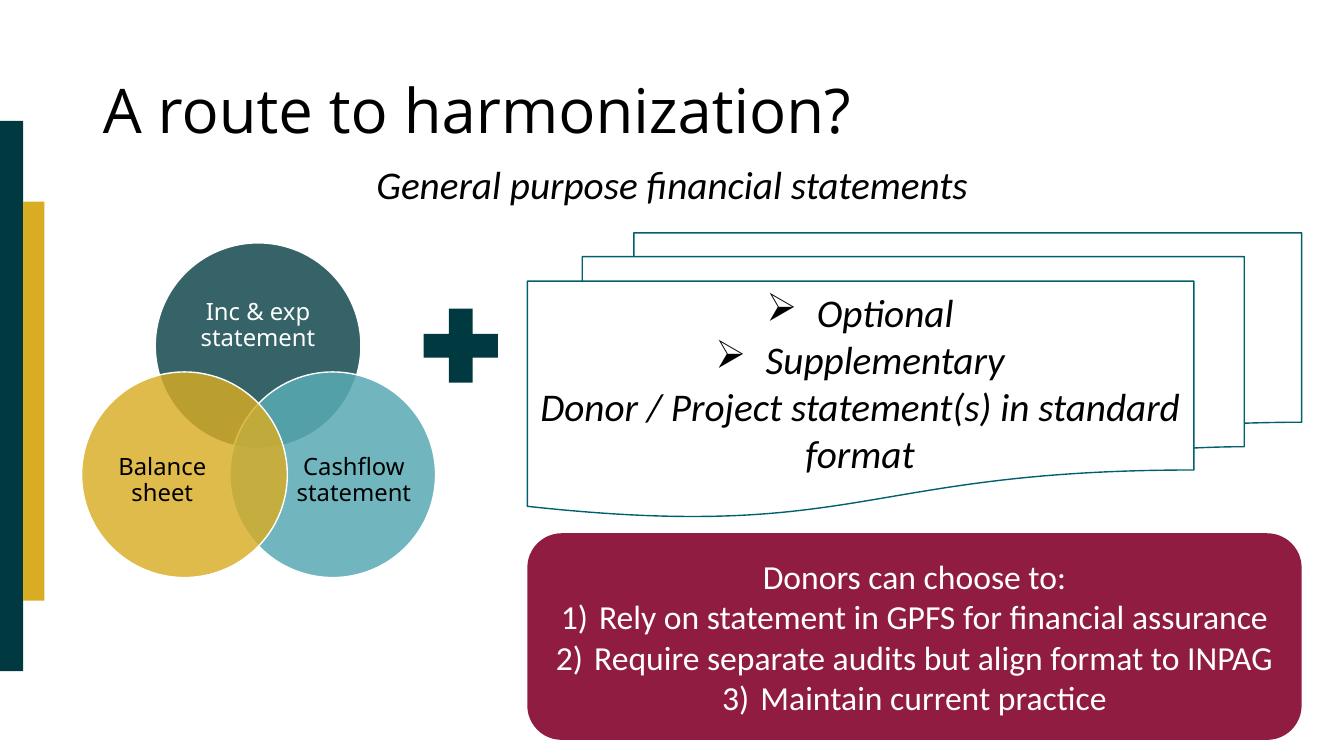
"""Build the slide on a route to harmonized financial statements."""
import lxml.etree
import pptx
import pptx.dml.color
import pptx.enum.shapes
import pptx.enum.text
import pptx.oxml.ns
import pptx.util

RGBColor = pptx.dml.color.RGBColor
SHAPES = pptx.enum.shapes.MSO_SHAPE
ANCHOR = pptx.enum.text.MSO_ANCHOR
ALIGN = pptx.enum.text.PP_ALIGN

EMU_PER_PX = 9144
TEAL_DARK = RGBColor(0x00, 0x3A, 0x40)
TEAL_LINE = RGBColor(0x00, 0x61, 0x6C)
TEAL_LIGHT = RGBColor(0x5A, 0xAB, 0xB4)
GOLD = RGBColor(0xD8, 0xAD, 0x24)
BURGUNDY = RGBColor(0x90, 0x1D, 0x41)
WHITE = RGBColor(0xFF, 0xFF, 0xFF)
BLACK = RGBColor(0x00, 0x00, 0x00)

CIRCLE_SIZE = 204
ARROW_BULLET = ("buChar", {"char": "➢"}, 50)
NUMBER_BULLET = ("buAutoNum", {"type": "arabicParenR"}, 38)


def px(length):
    """Turn px into EMU."""
    return pptx.util.Emu(length * EMU_PER_PX)


def add_child(parent, tag, attributes):
    """Append a drawing element with attributes to a parent element."""
    child = lxml.etree.SubElement(parent, pptx.oxml.ns.qn(f"a:{tag}"))
    for name, value in attributes.items():
        child.set(name, value)


def add_shape(slide, kind, box, fill=None, line=None, opacity=100):
    """Add a preset shape with an optional fill and outline."""
    shape = slide.shapes.add_shape(kind, *map(px, box))
    shape.shadow.inherit = False
    if fill is None:
        shape.fill.background()
    else:
        shape.fill.solid()
        shape.fill.fore_color.rgb = fill
        if opacity < 100:
            color = shape.fill._xPr.find(".//" + pptx.oxml.ns.qn("a:srgbClr"))
            add_child(color, "alpha", {"val": str(opacity * 1000)})
    if line is None:
        shape.line.fill.background()
    else:
        shape.line.color.rgb = line
        shape.line.width = pptx.util.Pt(1)
    return shape


def write_text(shape, lines, size, font, color, italic=False, align=ALIGN.CENTER,
               spacing=None, anchor=ANCHOR.TOP):
    """Write (text, bullet) lines into a shape."""
    frame = shape.text_frame
    frame.word_wrap = True
    frame.auto_size = pptx.enum.text.MSO_AUTO_SIZE.NONE
    frame.vertical_anchor = anchor
    for index, (text, bullet) in enumerate(lines):
        paragraph = frame.add_paragraph() if index else frame.paragraphs[0]
        paragraph.alignment = align
        if spacing:
            paragraph.line_spacing = spacing
        if bullet:
            tag, attributes, indent = bullet
            properties = paragraph._p.get_or_add_pPr()
            properties.set("marL", str(px(indent)))
            properties.set("indent", str(px(-indent)))
            add_child(properties, tag, attributes)
        run = paragraph.add_run()
        run.text = text
        run.font.size = pptx.util.Pt(size)
        run.font.name = font
        run.font.italic = italic
        run.font.color.rgb = color


def add_text(slide, box, lines, size, font, color, margin=None, **style):
    """Add a text box, with one margin on all sides if given."""
    shape = slide.shapes.add_textbox(*map(px, box))
    if margin is not None:
        frame = shape.text_frame
        frame.margin_left = frame.margin_right = px(margin)
        frame.margin_top = frame.margin_bottom = px(margin)
    write_text(shape, lines, size, font, color, **style)


def add_venn_circle(slide, left, top, fill, opacity, label, label_box, color):
    """Add one translucent circle and its label."""
    add_shape(slide, SHAPES.OVAL, (left, top, CIRCLE_SIZE, CIRCLE_SIZE),
              fill, WHITE, opacity)
    add_text(slide, label_box, [(label, None)], 17, "Noto Sans", color,
             margin=0, spacing=0.9, anchor=ANCHOR.MIDDLE)


def add_title(slide, text):
    """Place and format the title."""
    title = slide.shapes.title
    title.left, title.top, title.width, title.height = map(px, (92, 40, 1150, 145))
    write_text(title, [(text, None)], 44, "Open Sans", BLACK,
               align=ALIGN.LEFT, spacing=0.9, anchor=ANCHOR.MIDDLE)


def main():
    """Build and save the presentation."""
    presentation = pptx.Presentation()
    presentation.slide_width, presentation.slide_height = px(1333), px(750)
    slide = presentation.slides.add_slide(presentation.slide_layouts[5])

    add_shape(slide, SHAPES.RECTANGLE, (0, 120, 23, 546), TEAL_DARK)
    add_shape(slide, SHAPES.RECTANGLE, (23, 200, 21, 396), GOLD)
    add_title(slide, "A route to harmonization?")
    add_text(slide, (206, 154, 921, 57),
             [("General purpose financial statements", None)],
             28, "Calibri", BLACK, italic=True)

    add_venn_circle(slide, 154, 241, TEAL_DARK, 79, "Inc & exp statement",
                    (181, 277, 150, 92), WHITE)
    add_venn_circle(slide, 228, 369, TEAL_LIGHT, 86, "Cashflow statement",
                    (290, 421, 122, 112), BLACK)
    add_venn_circle(slide, 81, 369, GOLD, 82, "Balance sheet",
                    (100, 421, 122, 112), BLACK)
    add_shape(slide, SHAPES.MATH_PLUS, (407, 293, 100, 100), TEAL_DARK)

    add_shape(slide, SHAPES.FLOWCHART_MULTIDOCUMENT, (523, 231, 768, 282),
              line=TEAL_LINE)
    add_text(slide, (523, 281, 660, 199),
             [("Optional", ARROW_BULLET),
              ("Supplementary", ARROW_BULLET),
              ("Donor / Project statement(s) in standard format", None)],
             28, "Calibri", BLACK, italic=True)

    choices = add_shape(slide, SHAPES.ROUNDED_RECTANGLE, (523, 529, 768, 205),
                        BURGUNDY)
    write_text(choices,
               [("Donors can choose to:", None),
                ("Rely on statement in GPFS for financial assurance", NUMBER_BULLET),
                ("Require separate audits but align format to INPAG", NUMBER_BULLET),
                ("Maintain current practice", NUMBER_BULLET)],
               24, "Calibri", WHITE, anchor=ANCHOR.MIDDLE)

    presentation.save("out.pptx")


if __name__ == "__main__":
    main()
